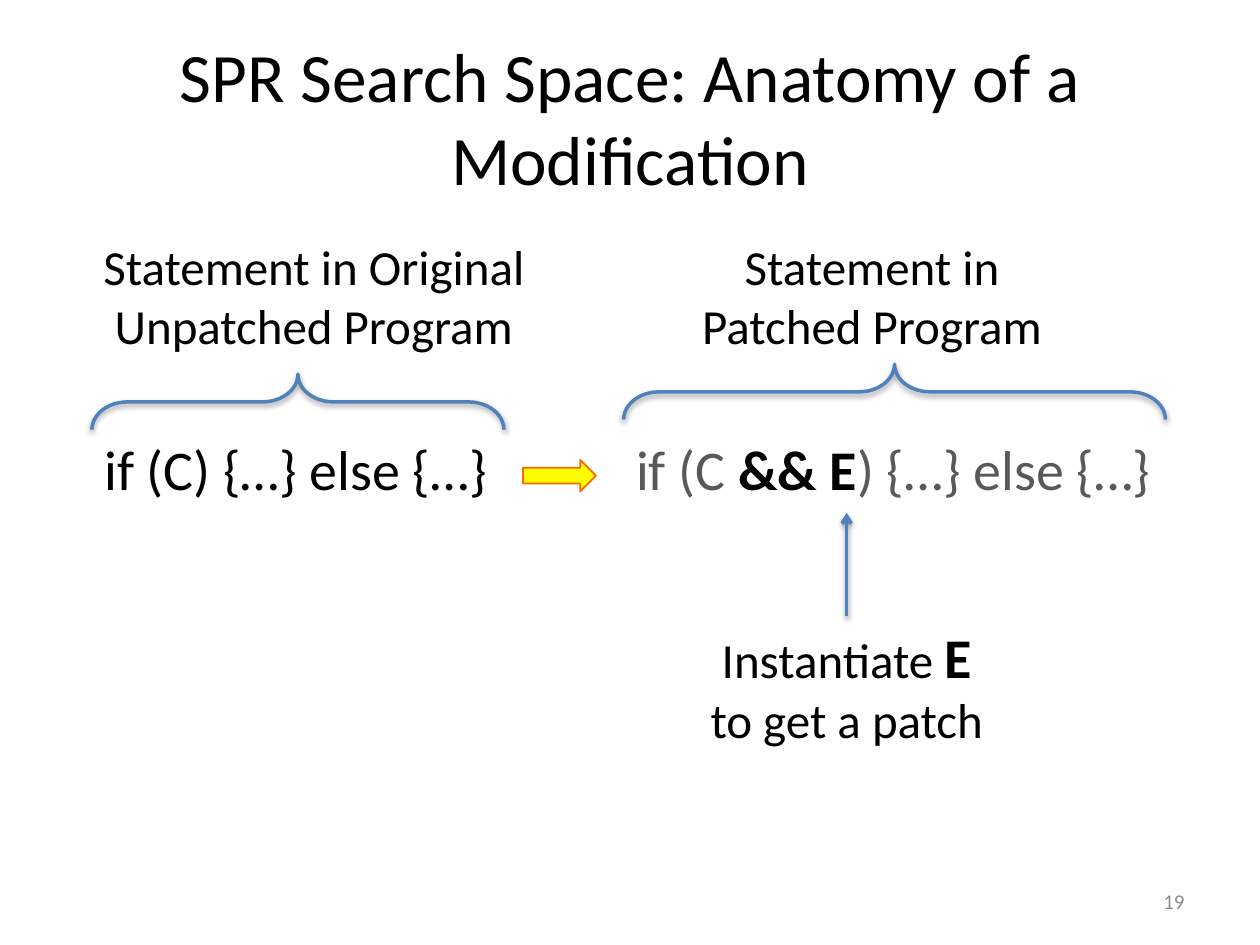
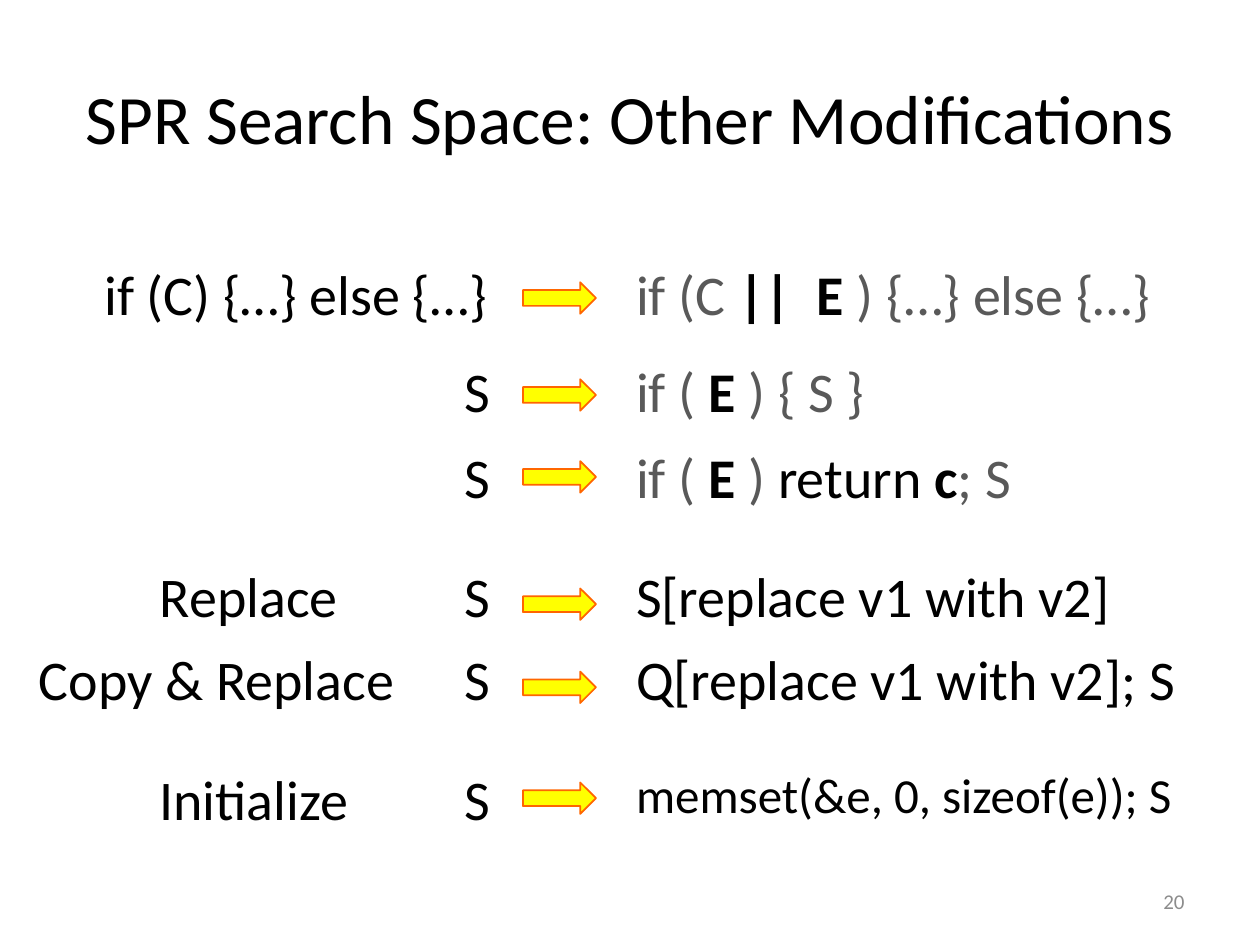
from dataclasses import dataclass

from lxml.etree import SubElement
from pptx import Presentation
from pptx.dml.color import RGBColor
from pptx.enum.shapes import MSO_CONNECTOR, MSO_SHAPE
from pptx.enum.text import MSO_ANCHOR, MSO_AUTO_SIZE, PP_ALIGN
from pptx.oxml.ns import qn
from pptx.shapes.autoshape import Shape
from pptx.shapes.base import BaseShape
from pptx.slide import Slide
from pptx.util import Emu, Inches, Pt

SLIDE_WIDTH, SLIDE_HEIGHT = Inches(10), Inches(7.5)
GRID_COLUMNS, GRID_ROWS = 20, 15
FONT = "Calibri"
BLACK, GRAY, PALE_GRAY = "000000", "595959", "8C8C8C"
YELLOW, ORANGE, BLUE = "FFFF00", "FF6600", "4F81BD"
SOURCE_RIGHT, ARROW_LEFT, TARGET_LEFT = 8, 8.3, 9.9
CODE_HEIGHT = 1.28


@dataclass(frozen=True)
class Box:
    """A rectangle in grid columns and rows."""

    left: float
    top: float
    width: float
    height: float

    def lengths(self) -> tuple[Emu, Emu, Emu, Emu]:
        """Return the rectangle in slide lengths."""
        return column(self.left), row(self.top), column(self.width), row(self.height)


@dataclass(frozen=True)
class Run:
    """A stretch of text that may differ from its surroundings."""

    text: str
    color: str = BLACK
    bold: bool = False
    size: float | None = None


@dataclass(frozen=True)
class Code:
    """A line of code and the columns it takes."""

    runs: tuple[Run, ...]
    width: float
    size: float = 32


@dataclass(frozen=True)
class Operation:
    """A named operation left of a rewrite."""

    name: str
    left: float
    width: float
    align: PP_ALIGN = PP_ALIGN.CENTER


@dataclass(frozen=True)
class Rewrite:
    """A statement, an arrow and the statement it becomes."""

    top: float
    arrow_drop: float
    source: Code
    target: Code
    operation: Operation | None = None


CONDITIONAL = Code((Run("if (C) {…} else {…}"),), 6.54)
STATEMENT = Code((Run("S"),), 0.82)
GUARD = (Run("if ( ", GRAY), Run("E ", bold=True))
BRANCHES = Run(") {…} else {…}", GRAY)

ANATOMY = Rewrite(6.8, 0.5, CONDITIONAL,
                  Code((Run("if (C ", GRAY), Run("&& E", bold=True), BRANCHES), 8.6))

MODIFICATIONS = (
    Rewrite(4.02, 0.46, CONDITIONAL,
            Code((Run("if (C ", GRAY), Run("||  E ", bold=True), BRANCHES), 8.66)),
    Rewrite(5.56, 0.46, STATEMENT, Code((*GUARD, Run(") { S }", GRAY)), 4.06)),
    Rewrite(6.92, 0.4, STATEMENT,
            Code((*GUARD, Run(")", GRAY), Run(" return "), Run("c", bold=True),
                  Run("; S", GRAY)), 6.44)),
    Rewrite(8.82, 0.52, STATEMENT, Code((Run("S[replace v1 with v2]"),), 8),
            Operation("Replace", 2.34, 3.28, PP_ALIGN.LEFT)),
    Rewrite(10.14, 0.52, STATEMENT, Code((Run("Q[replace v1 with v2]; S"),), 9.06),
            Operation("Copy & Replace", 0.38, 6.12)),
    Rewrite(12.04, 0.38, STATEMENT, Code((Run("memset(&e, 0, sizeof(e)); S"),), 9.02, 28),
            Operation("Initialize", 2.3, 3.46)),
)


def column(count: float) -> Emu:
    """Return the width of a number of grid columns."""
    return Emu(round(SLIDE_WIDTH * count / GRID_COLUMNS))


def row(count: float) -> Emu:
    """Return the height of a number of grid rows."""
    return Emu(round(SLIDE_HEIGHT * count / GRID_ROWS))


def rgb(color: str) -> RGBColor:
    """Turn a hex string into a colour."""
    return RGBColor.from_string(color)


def write(shape: Shape, text: str | tuple[Run, ...], *, size: float = 32,
          color: str = BLACK, align: PP_ALIGN = PP_ALIGN.LEFT,
          anchor: MSO_ANCHOR = MSO_ANCHOR.TOP, wrap: bool = True,
          grow: bool = True) -> None:
    """Fill a shape with one formatted paragraph."""
    frame = shape.text_frame
    frame.word_wrap = wrap
    frame.auto_size = MSO_AUTO_SIZE.SHAPE_TO_FIT_TEXT if grow else MSO_AUTO_SIZE.NONE
    frame.vertical_anchor = anchor
    paragraph = frame.paragraphs[0]
    paragraph.alignment = align
    for part in (Run(text, color),) if isinstance(text, str) else text:
        run = paragraph.add_run()
        run.text = part.text
        run.font.name = FONT
        run.font.size = Pt(part.size or size)
        run.font.bold = part.bold
        run.font.color.rgb = rgb(part.color)


def add_text(slide: Slide, box: Box, text: str | tuple[Run, ...], **text_format) -> Shape:
    """Add a text box and write in it."""
    shape = slide.shapes.add_textbox(*box.lengths())
    write(shape, text, **text_format)
    return shape


def add_shadow(shape: BaseShape) -> None:
    """Give a shape a soft shadow straight below it."""
    effects = SubElement(shape.element.spPr, qn("a:effectLst"))
    shadow = SubElement(effects, qn("a:outerShdw"), blurRad="40000", dist="20000",
                        dir="5400000", rotWithShape="0")
    color = SubElement(shadow, qn("a:srgbClr"), val=BLACK)
    SubElement(color, qn("a:alpha"), val="38000")


def add_arrow(slide: Slide, top: float) -> None:
    """Add the block arrow between two statements."""
    arrow = slide.shapes.add_shape(MSO_SHAPE.RIGHT_ARROW,
                                   *Box(ARROW_LEFT, top, 1.16, 0.5).lengths())
    arrow.shadow.inherit = False
    arrow.fill.solid()
    arrow.fill.fore_color.rgb = rgb(YELLOW)
    arrow.line.color.rgb = rgb(ORANGE)
    arrow.line.width = Pt(1)


def add_brace(slide: Slide, span: Box) -> None:
    """Add a brace that points up and covers the given span."""
    left, top, width, height = span.lengths()
    shift = (width - height) // 2
    brace = slide.shapes.add_shape(MSO_SHAPE.RIGHT_BRACE, left + shift, top - shift,
                                   height, width)
    brace.rotation = 270
    brace.adjustments[0] = 0.64
    brace.adjustments[1] = 0.5
    brace.fill.background()
    brace.line.color.rgb = rgb(BLUE)
    brace.line.width = Pt(2)
    add_shadow(brace)


def add_pointer(slide: Slide, label: Shape, tip_row: float) -> None:
    """Add an arrow from the top of a label up to a row."""
    middle = label.left + label.width // 2
    pointer = slide.shapes.add_connector(MSO_CONNECTOR.STRAIGHT, middle, label.top,
                                         middle, row(tip_row))
    pointer.begin_connect(label, 0)
    pointer.line.color.rgb = rgb(BLUE)
    pointer.line.width = Pt(2)
    SubElement(pointer.element.spPr.find(qn("a:ln")), qn("a:tailEnd"), type="arrow")
    add_shadow(pointer)


def add_rewrite(slide: Slide, rewrite: Rewrite) -> None:
    """Draw one rewrite across the slide."""
    source, target, operation = rewrite.source, rewrite.target, rewrite.operation
    for code, left in ((source, SOURCE_RIGHT - source.width), (target, TARGET_LEFT)):
        add_text(slide, Box(left, rewrite.top, code.width, CODE_HEIGHT), code.runs,
                 size=code.size, wrap=False)
    add_arrow(slide, rewrite.top + rewrite.arrow_drop)
    if operation:
        add_text(slide, Box(operation.left, rewrite.top, operation.width, CODE_HEIGHT),
                 operation.name, align=operation.align, wrap=False)


def add_titled_slide(presentation: Presentation, title: str, number: int) -> Slide:
    """Add a slide with its title and number."""
    slide = presentation.slides.add_slide(presentation.slide_layouts.get_by_name("Title Only"))
    heading = slide.shapes.title
    heading.left, heading.top, heading.width, heading.height = Box(1, 0.6, 18, 2.5).lengths()
    write(heading, title, size=39.6, align=PP_ALIGN.CENTER, anchor=MSO_ANCHOR.MIDDLE,
          grow=False)
    add_text(slide, Box(14.34, 13.9, 4.66, 0.8), str(number), size=12, color=PALE_GRAY,
             align=PP_ALIGN.RIGHT, anchor=MSO_ANCHOR.MIDDLE, grow=False)
    return slide


def build_anatomy(presentation: Presentation) -> None:
    """Build the slide that explains one modification."""
    slide = add_titled_slide(presentation, "SPR Search Space: Anatomy of a Modification", 19)
    add_rewrite(slide, ANATOMY)
    captions = (
        (Box(0.88, 3.66, 8.2, 2.08), "Statement in Original Unpatched Program"),
        (Box(10.36, 3.66, 6.96, 2.08), "Statement in Patched Program"),
    )
    for box, caption in captions:
        add_text(slide, box, caption, size=28, align=PP_ALIGN.CENTER)
    add_brace(slide, Box(SOURCE_RIGHT - ANATOMY.source.width, 5.94,
                         ANATOMY.source.width, 0.88))
    add_brace(slide, Box(TARGET_LEFT, 5.78, ANATOMY.target.width, 0.88))
    label = add_text(slide, Box(10.88, 9.78, 5.12, 2.22),
                     (Run("Instantiate "), Run("E", bold=True, size=32),
                      Run(" to get a patch")),
                     size=28, align=PP_ALIGN.CENTER)
    add_pointer(slide, label, 8.14)


def build_modifications(presentation: Presentation) -> None:
    """Build the slide that lists the other modifications."""
    slide = add_titled_slide(presentation, "SPR Search Space: Other Modifications", 20)
    for rewrite in MODIFICATIONS:
        add_rewrite(slide, rewrite)


def main() -> None:
    """Build and save the presentation."""
    presentation = Presentation()
    presentation.slide_width, presentation.slide_height = SLIDE_WIDTH, SLIDE_HEIGHT
    build_anatomy(presentation)
    build_modifications(presentation)
    presentation.save("out.pptx")


if __name__ == "__main__":
    main()
